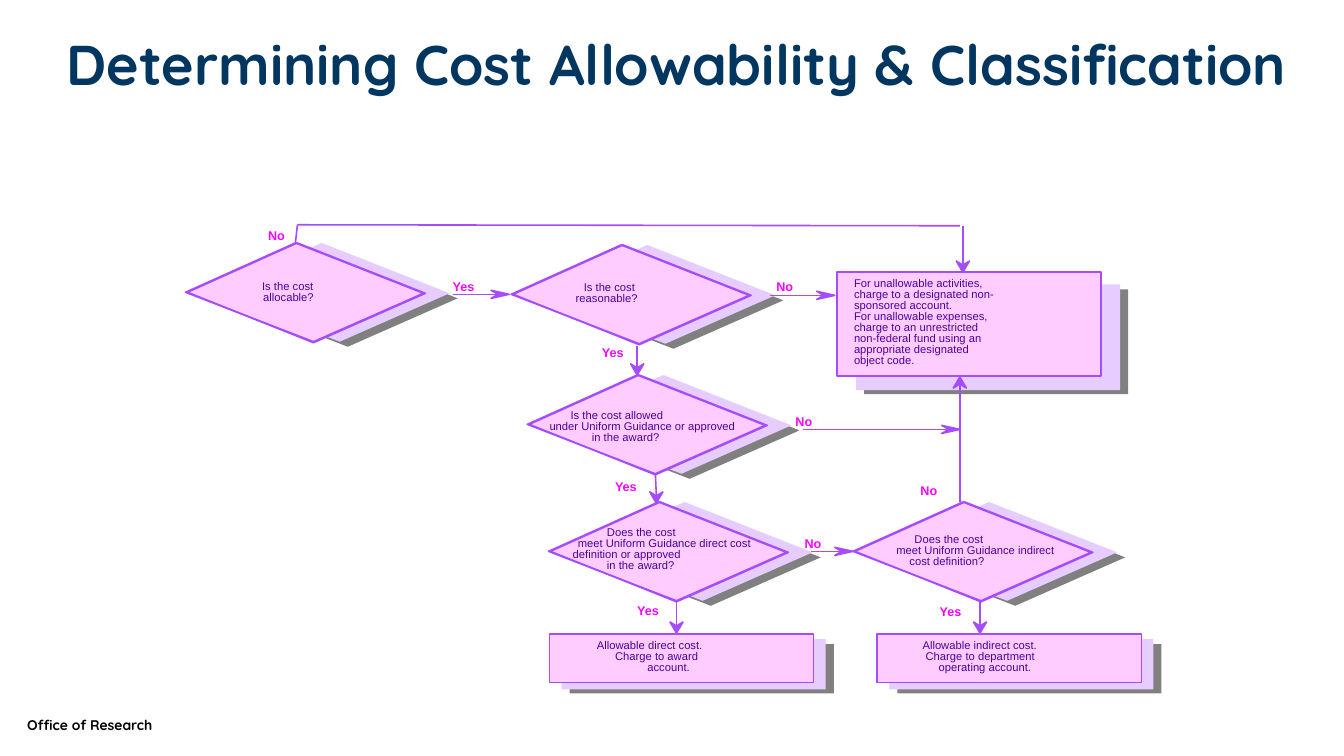
from lxml.etree import SubElement
from pptx import Presentation
from pptx.dml.color import RGBColor
from pptx.enum.shapes import MSO_CONNECTOR as Line, MSO_SHAPE as Shape
from pptx.enum.text import MSO_ANCHOR as Anchor
from pptx.oxml.ns import qn
from pptx.util import Inches, Pt

TITLE = "Determining Cost Allowability & Classification"
FOOTER = "Office of Research"
PINK, LILAC, GREY, PURPLE = "FFCCFF", "E6CCFF", "808080", "A64CFF"
NAVY, INK, MAGENTA, BLACK = "003660", "4C0099", "FF00FF", "000000"

# Questions: left, top, top of the wording, lines as (indent, words)
QUESTIONS = [
    (1.84, 2.41, 0.37, [(0.76, "Is the cost"), (0.77, "allocable?")]),
    (5.07, 2.43, 0.36, [(0.72, "Is the cost"), (0.64, "reasonable?")]),
    (5.23, 3.72, 0.34, [(0.43, "Is the cost allowed"),
                        (0.22, "under Uniform Guidance or approved"),
                        (0.64, "in the award?")]),
    (5.44, 4.98, 0.24, [(0.58, "Does the cost"),
                        (0.29, "meet Uniform Guidance direct cost"),
                        (0.24, "definition or approved"),
                        (0.58, "in the award?")]),
    (8.46, 4.98, 0.31, [(0.61, "Does the cost"),
                        (0.43, "meet Uniform Guidance indirect"),
                        (0.56, "cost definition?")]),
]

# Outcomes: left, top, height, layer offset (right, down), lines
OUTCOMES = [
    (8.3, 2.7, 1.03, (0.19, 0.12), [(0.17, words) for words in (
        "For unallowable activities,", "charge to a designated non-",
        "sponsored account.", "For unallowable expenses,",
        "charge to an unrestricted", "non-federal fund using an",
        "appropriate designated", "object code.")]),
    (5.45, 6.29, 0.48, (0.12, 0.05), [(0.47, "Allowable direct cost."),
                                      (0.65, "Charge to award"),
                                      (0.97, "account.")]),
    (8.7, 6.29, 0.48, (0.12, 0.05), [(0.45, "Allowable indirect cost."),
                                     (0.48, "Charge to department"),
                                     (0.61, "operating account.")]),
]

# Arrows: start and tip
ARROWS = [
    ((4.49, 2.92), (5.05, 2.92)), ((7.64, 2.93), (8.28, 2.93)),
    ((7.96, 4.26), (9.52, 4.26)), ((8.04, 5.47), (8.46, 5.47)),
    ((6.32, 3.43), (6.32, 3.72)), ((6.5, 4.7), (6.51, 4.99)),
    ((6.71, 5.97), (6.71, 6.28)), ((9.72, 5.96), (9.72, 6.28)),
    ((9.52, 4.98), (9.52, 3.74)), ((9.55, 2.24), (9.55, 2.7)),
]
BYPASS = [(2.93, 2.41), (2.95, 2.23), (9.52, 2.24)]

# Answers: places of each label, and its width
ANSWERS = {
    "No": (0.17, [(2.66, 2.26), (7.7, 2.77), (7.89, 4.11), (7.98, 5.32),
                  (9.13, 4.79)]),
    "Yes": (0.22, [(4.49, 2.77), (5.97, 3.42), (6.1, 4.75), (6.32, 5.98),
                   (9.32, 5.99)]),
}

DIAMOND = [(1.09, 0), (2.36, 0.5), (1.27, 0.98), (0, 0.49)]
RIM = [(1.09, 0), (2.36, 0.5), (1.25, 0.99), (0, 0.49)]
BOX_WIDTH = 2.62
LINE_PITCH = 7.8

deck = Presentation()
deck.slide_width, deck.slide_height = Inches(13.33), Inches(7.5)
slide = deck.slides.add_slide(deck.slide_layouts[6])
shapes = slide.shapes


def color(value):
    return RGBColor.from_string(value)


def paint(shape, fill=None, edge=None):
    shape.shadow.inherit = False
    if fill:
        shape.fill.solid()
        shape.fill.fore_color.rgb = color(fill)
    else:
        shape.fill.background()
    if edge:
        shape.line.color.rgb = color(edge)
        shape.line.width = Pt(1.13)
    else:
        shape.line.fill.background()


def outline(points, left, top, fill=None, edge=None):
    corners = [(Inches(left + x), Inches(top + y)) for x, y in points]
    builder = shapes.build_freeform(*corners[0])
    builder.add_line_segments(corners[1:], close=True)
    paint(builder.convert_to_shape(), fill, edge)


def box(left, top, width, height, fill, edge=None):
    paint(shapes.add_shape(Shape.RECTANGLE, Inches(left), Inches(top),
                           Inches(width), Inches(height)), fill, edge)


def line(start, end):
    link = shapes.add_connector(Line.STRAIGHT, *map(Inches, start + end))
    link.line.color.rgb = color(PURPLE)
    link.line.width = Pt(1.13)
    SubElement(link._element.spPr, qn("a:effectLst"))


def arrow(start, tip):
    (x0, y0), (x, y) = start, tip
    if abs(x - x0) > abs(y - y0):
        length, notch, half = 0.18, 0.11, 0.04
        head = [(0, 0), (-length, half), (-notch, 0), (-length, -half)]
        stop = (x - notch, y)
    else:
        way = 1 if y > y0 else -1
        length, notch, half = 0.11 * way, 0.07 * way, 0.065
        head = [(0, 0), (-half, -length), (0, -notch), (half, -length)]
        stop = (x, y - notch)
    line(start, stop)
    outline(head, x, y, PURPLE, PURPLE)


def text(left, top, width, height, lines, size, tint, font="Arial",
         bold=False, wrap=True, inset=True, spacing=None):
    frame = shapes.add_textbox(*map(Inches, (left, top, width, height))).text_frame
    frame.word_wrap = wrap
    frame.vertical_anchor = Anchor.TOP
    if not inset:
        frame.margin_left = frame.margin_right = 0
        frame.margin_top = frame.margin_bottom = 0
    for i, (indent, words) in enumerate(lines):
        para = frame.paragraphs[0] if i == 0 else frame.add_paragraph()
        if indent:
            props = para._p.get_or_add_pPr()
            props.set("marL", str(Inches(indent)))
            props.set("indent", "0")
        if spacing:
            para.line_spacing = spacing
        run = para.add_run()
        run.text = words
        run.font.size, run.font.name, run.font.bold = Pt(size), font, bold
        run.font.color.rgb = color(tint)


def wording(left, top, lines):
    # Fixed line pitch trims the first line, so the box sits a little lower
    text(left, top + 0.02, BOX_WIDTH, len(lines) * LINE_PITCH / 72, lines, 8,
         INK, inset=False, spacing=Pt(LINE_PITCH))


# Title and footer
text(0.56, 0.32, 12.5, 1.08, [(0, TITLE)], 40, NAVY, "Quicksand", True,
     spacing=0.9)
text(0.17, 7.06, 1.45, 0.27, [(0, FOOTER)], 10, BLACK, "Quicksand", True,
     wrap=False)

# Questions
for left, top, drop, lines in QUESTIONS:
    outline(DIAMOND, left + 0.34, top + 0.05, GREY)
    outline(DIAMOND, left + 0.26, top, LILAC)
    outline(DIAMOND, left, top, PINK, PURPLE)
    outline(RIM, left + 0.02, top, None, PURPLE)
    wording(left, top + drop, lines)

# Outcomes
for left, top, height, (right, down), lines in OUTCOMES:
    box(left + right + 0.08, top + down + 0.05, BOX_WIDTH, height + 0.01, GREY)
    box(left + right, top + down, BOX_WIDTH, height + 0.02, LILAC)
    box(left, top, BOX_WIDTH, height, PINK, PURPLE)
    wording(left, top + 0.05, lines)

# Arrows and the bypass line
for start, tip in ARROWS:
    arrow(start, tip)
for start, end in zip(BYPASS, BYPASS[1:]):
    line(start, end)

# Answers
for answer, (width, places) in ANSWERS.items():
    for left, top in places:
        text(left, top, width, 0.15, [(0, answer)], 9, MAGENTA, bold=True,
             wrap=False, inset=False)

deck.save("out.pptx")
